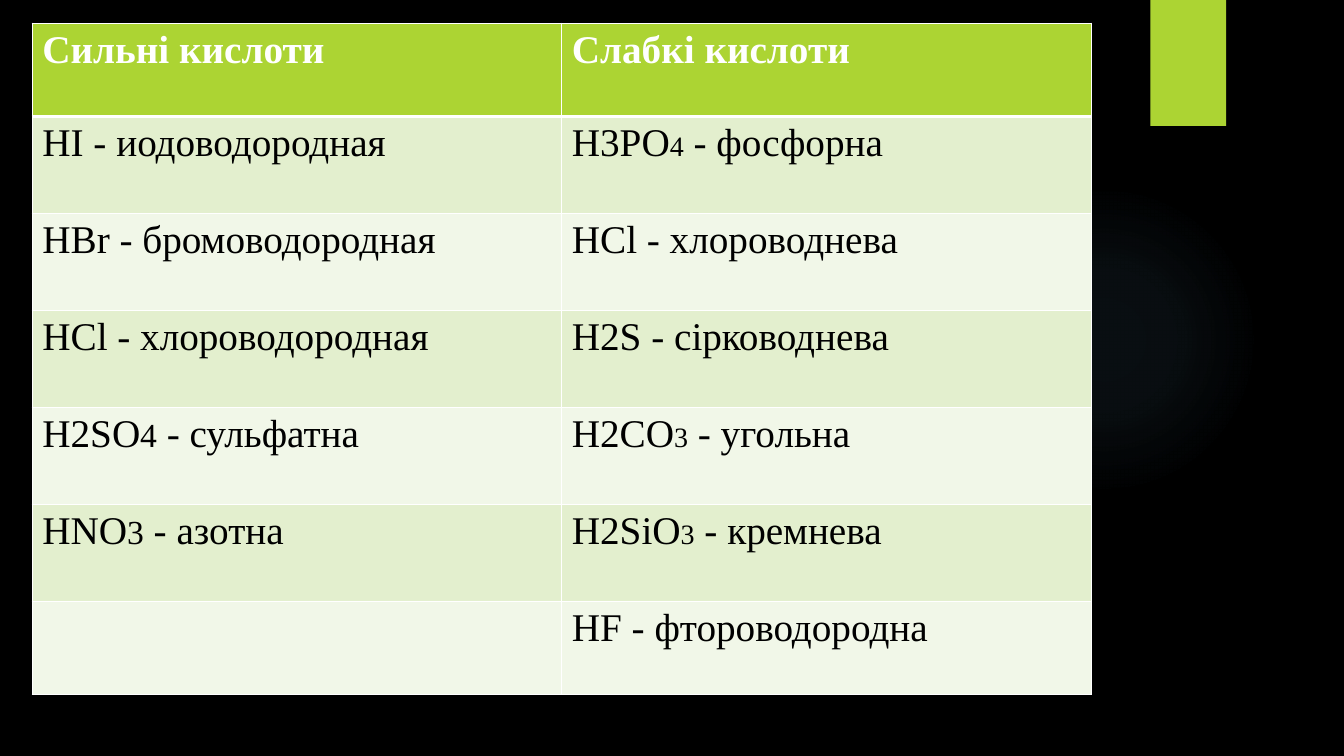
from pptx import Presentation
from pptx.dml.color import RGBColor
from pptx.enum.shapes import MSO_SHAPE
from pptx.oxml import parse_xml
from pptx.oxml.ns import nsdecls, qn
from pptx.util import Inches, Pt

OVAL, RECT = MSO_SHAPE.OVAL, MSO_SHAPE.RECTANGLE
FONT, SIZE = "Times New Roman", 28
HUES = {"back": "000000", "ink": "000000", "line": "FFFFFF", "lime": "ACD433",
        "dark": "E3EFCE", "pale": "F1F7E8", "glow": "7AC4F0"}

# Each acid is split into plain, small and plain pieces
HEAD = ["Сильні кислоти", "Слабкі кислоти"]
ACIDS = [
    [["HI - иодоводородная"], ["H3PO", "4", " - фосфорна"]],
    [["HBr - бромоводородная"], ["HCl - хлороводнева"]],
    [["HCl - хлороводородная"], ["H2S - сірководнева"]],
    [["H2SO", "4", " - сульфатна"], ["H2CO", "3", " - угольна"]],
    [["HNO", "3", " - азотна"], ["H2SiO", "3", " - кремнева"]],
    [[], ["HF - фтороводородна"]],
]
SMALL = [24, 20]  # size of the small digit in each column


def color(name):
    return RGBColor.from_string(HUES[name])


def write(para, text, size=SIZE, hue="ink", bold=False):
    run = para.add_run()
    run.text = text
    font = run.font
    font.name, font.size, font.bold = FONT, Pt(size), bold
    font.color.rgb = color(hue)


class Deck:
    """Holds the slide; lengths are percent of its width and height."""

    def __init__(self):
        self.file = Presentation()
        self.file.slide_width = Inches(13.33)
        self.file.slide_height = Inches(7.5)
        self.slide = self.file.slides.add_slide(self.file.slide_layouts[6])
        fill = self.slide.background.fill
        fill.solid()
        fill.fore_color.rgb = color("back")

    def wide(self, share):
        return round(self.file.slide_width * share / 100)

    def high(self, share):
        return round(self.file.slide_height * share / 100)

    def shape(self, kind, left, top, width, height, hue):
        item = self.slide.shapes.add_shape(
            kind, self.wide(left), self.high(top),
            self.wide(width), self.high(height))
        item.shadow.inherit = False
        item.fill.solid()
        item.fill.fore_color.rgb = color(hue)
        item.line.fill.background()
        return item

    def glow(self, item, hue, stops):
        """Swap the plain fill for a clear round gradient."""
        marks = "".join(
            f'<a:gs pos="{pos * 1000}"><a:srgbClr val="{HUES[hue]}">'
            f'<a:alpha val="{alpha * 1000}"/></a:srgbClr></a:gs>'
            for pos, alpha in stops)
        grad = parse_xml(
            f'<a:gradFill {nsdecls("a")}><a:gsLst>{marks}</a:gsLst>'
            '<a:path path="circle"><a:fillToRect l="50000" t="50000" '
            'r="50000" b="50000"/></a:path></a:gradFill>')
        props = item.element.spPr
        props.replace(props.find(qn("a:solidFill")), grad)

    def shade(self, item, blur, dist, alpha):
        """Drop a soft shadow straight down."""
        item.element.spPr.find(qn("a:effectLst")).append(parse_xml(
            f'<a:outerShdw {nsdecls("a")} blurRad="{Pt(blur)}" '
            f'dist="{Pt(dist)}" dir="5400000"><a:srgbClr val="{HUES["back"]}">'
            f'<a:alpha val="{alpha * 1000}"/></a:srgbClr></a:outerShdw>'))

    def table(self, left, top, widths, heights):
        grid = self.slide.shapes.add_table(
            len(heights), len(widths), self.wide(left), self.high(top),
            self.wide(sum(widths)), self.high(sum(heights))).table
        for col, width in zip(grid.columns, widths):
            col.width = self.wide(width)
        for row, height in zip(grid.rows, heights):
            row.height = self.high(height)
        return grid

    def cell(self, cell, hue, base=1, roof=1):
        """Fill a cell and rule its four edges."""
        cell.fill.solid()
        cell.fill.fore_color.rgb = color(hue)
        props = cell._tc.get_or_add_tcPr()
        edges = {"L": 1, "R": 1, "T": roof, "B": base}
        for spot, (side, width) in enumerate(edges.items()):
            props.insert(spot, parse_xml(
                f'<a:ln{side} {nsdecls("a")} w="{Pt(width)}"><a:solidFill>'
                f'<a:srgbClr val="{HUES["line"]}"/></a:solidFill></a:ln{side}>'))
        return cell.text_frame.paragraphs[0]


def main():
    deck = Deck()

    # Backdrop glow and corner tab
    orb = deck.shape(OVAL, 70.59, 24.4, 23.1, 41.07, "glow")
    deck.glow(orb, "glow", [(0, 7), (36, 6), (69, 0)])
    tab = deck.shape(RECT, 85.6, 0, 5.63, 16.67, "lime")
    deck.shade(tab, 3, 2, 45)

    # Table header
    grid = deck.table(2.4, 3.07, [39.4] * 2, [12.33] + [12.83] * 5 + [12.33])
    for col, text in enumerate(HEAD):
        para = deck.cell(grid.cell(0, col), "lime", base=3)
        write(para, text, hue="line", bold=True)

    # Acids in banded rows
    for row, acids in enumerate(ACIDS, 1):
        band = "dark" if row % 2 else "pale"
        for col, parts in enumerate(acids):
            para = deck.cell(grid.cell(row, col), band, roof=3 if row == 1 else 1)
            for spot, text in enumerate(parts):
                write(para, text, size=SMALL[col] if spot % 2 else SIZE)

    deck.file.save("out.pptx")


if __name__ == "__main__":
    main()
